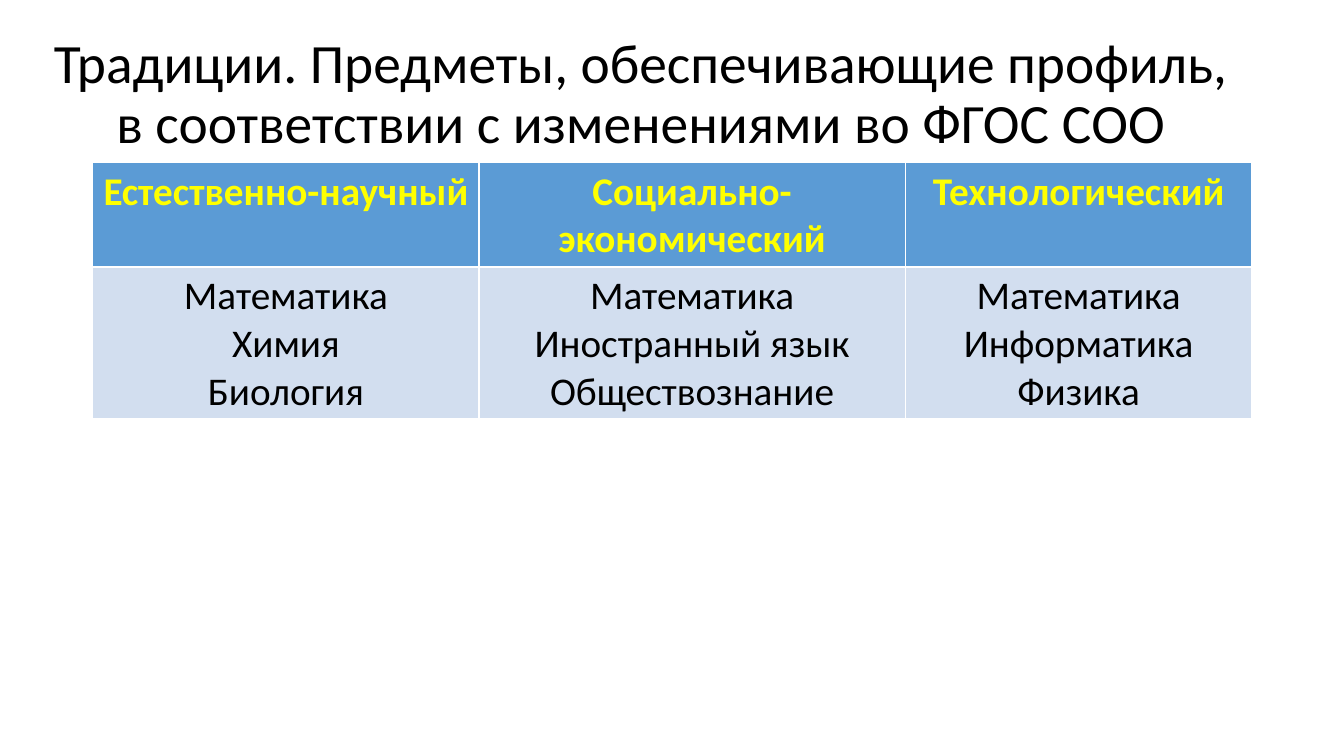
from pptx import Presentation
from pptx.dml.color import RGBColor
from pptx.enum.text import MSO_ANCHOR, PP_ALIGN
from pptx.util import Cm, Pt

BLACK = RGBColor(0x00, 0x00, 0x00)
YELLOW = RGBColor(0xFF, 0xFF, 0x00)
BLUE = RGBColor(0x5B, 0x9B, 0xD5)
PALE_BLUE = RGBColor(0xD2, 0xDE, 0xEF)

TITLE = "Традиции. Предметы, обеспечивающие профиль, в соответствии с изменениями во ФГОС СОО"
# Profile name, column width in cm, subjects
PROFILES = [
    ("Естественно-научный", 9.73, ["Математика", "Химия", "Биология"]),
    ("Социально-экономический", 10.74, ["Математика", "Иностранный язык", "Обществознание"]),
    ("Технологический", 8.74, ["Математика", "Информатика", "Физика"]),
]
ROW_HEIGHTS = [2.6, 3.82]


def format_text(text_frame, size, color, bold=False):
    for para in text_frame.paragraphs:
        para.alignment = PP_ALIGN.CENTER
        for span in para.runs:
            span.font.name = "Calibri"
            span.font.size = Pt(size)
            span.font.bold = bold
            span.font.color.rgb = color


deck = Presentation()
deck.slide_width = Cm(33.87)
deck.slide_height = Cm(19.05)
page = deck.slides.add_slide(deck.slide_layouts[6])

# Title
box = page.shapes.add_textbox(Cm(0.76), Cm(1.02), Cm(30.78), Cm(2.77))
title_frame = box.text_frame
title_frame.word_wrap = True
title_frame.vertical_anchor = MSO_ANCHOR.MIDDLE
title_frame.text = TITLE
title_frame.paragraphs[0].line_spacing = 0.9
format_text(title_frame, 39.6, BLACK)

# Table of profiles; its default style draws the white borders
table_width = sum(width for _, width, _ in PROFILES)
table = page.shapes.add_table(
    len(ROW_HEIGHTS), len(PROFILES), Cm(2.34), Cm(4.1), Cm(table_width), Cm(sum(ROW_HEIGHTS))
).table
for row, height in zip(table.rows, ROW_HEIGHTS):
    row.height = Cm(height)

for column, (profile, width, subjects) in enumerate(PROFILES):
    table.columns[column].width = Cm(width)
    cells = [
        (profile, BLUE, YELLOW, True),
        ("\n".join(subjects), PALE_BLUE, BLACK, False),
    ]
    for row, (text, fill, color, bold) in enumerate(cells):
        cell = table.cell(row, column)
        cell.fill.solid()
        cell.fill.fore_color.rgb = fill
        cell.text_frame.text = text
        format_text(cell.text_frame, 28, color, bold)

deck.save("out.pptx")
